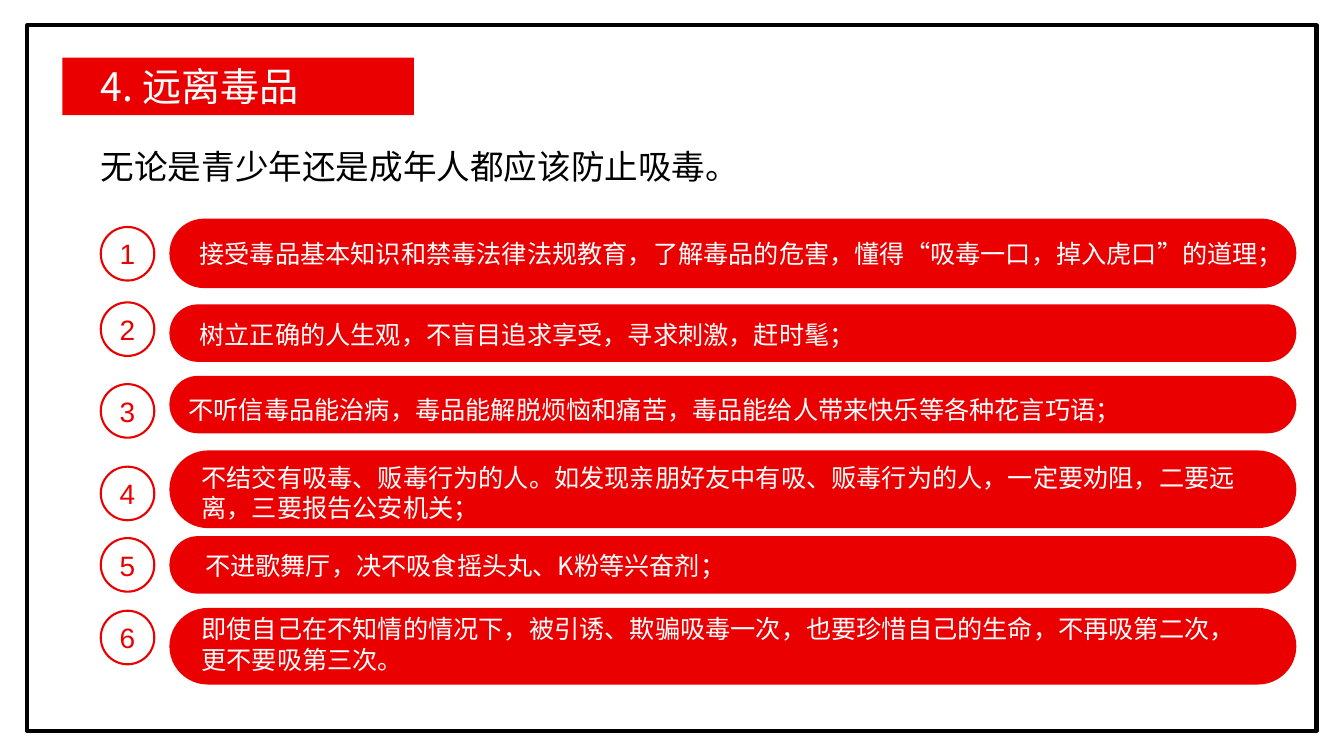
"""Build the slide on staying away from drugs, with six numbered pieces of advice."""

from dataclasses import dataclass

from lxml.etree import SubElement
from pptx import Presentation
from pptx.dml.color import RGBColor
from pptx.enum.shapes import MSO_SHAPE
from pptx.enum.text import MSO_ANCHOR, MSO_AUTO_SIZE, PP_ALIGN
from pptx.oxml.ns import qn
from pptx.shapes.autoshape import Shape
from pptx.slide import Slide
from pptx.text.text import TextFrame
from pptx.util import Cm, Pt

RED = RGBColor(0xEA, 0x00, 0x00)
WHITE = RGBColor(0xFF, 0xFF, 0xFF)
BLACK = RGBColor(0x00, 0x00, 0x00)
CHINESE_FONT = "Noto Sans CJK SC"
NUMBER_FONT = "Arial"
CIRCLE_LEFT, CIRCLE_SIZE = 2.54, 1.35
BAR_LEFT, BAR_WIDTH = 4.27, 28.4


@dataclass(frozen=True)
class Box:
    left: float
    top: float
    width: float
    height: float

    def lengths(self) -> tuple[Cm, Cm, Cm, Cm]:
        return Cm(self.left), Cm(self.top), Cm(self.width), Cm(self.height)


@dataclass(frozen=True)
class Advice:
    circle_top: float
    bar_top: float
    bar_height: float
    text_box: Box
    text: str


ADVICE = [
    Advice(5.72, 5.51, 1.75, Box(4.78, 5.87, 27.48, 1.02),
           "接受毒品基本知识和禁毒法律法规教育，了解毒品的危害，懂得“吸毒一口，掉入虎口”的道理；"),
    Advice(7.62, 7.67, 1.45, Box(4.78, 7.92, 22.48, 1.02),
           "树立正确的人生观，不盲目追求享受，寻求刺激，赶时髦；"),
    Advice(9.68, 9.47, 1.45, Box(4.5, 9.8, 27.43, 1.02),
           "不听信毒品能治病，毒品能解脱烦恼和痛苦，毒品能给人带来快乐等各种花言巧语；"),
    Advice(11.76, 11.35, 1.96, Box(4.83, 11.53, 27.1, 1.8),
           "不结交有吸毒、贩毒行为的人。如发现亲朋好友中有吸、贩毒行为的人，一定要劝阻，二要远离，三要报告公安机关；"),
    Advice(13.56, 13.51, 1.45, Box(4.92, 13.74, 21.84, 1.02),
           "不进歌舞厅，决不吸食摇头丸、K粉等兴奋剂；"),
    Advice(15.39, 15.32, 1.93, Box(4.83, 15.34, 26.49, 1.8),
           "即使自己在不知情的情况下，被引诱、欺骗吸毒一次，也要珍惜自己的生命，不再吸第二次，更不要吸第三次。"),
]


def write(frame: TextFrame, text: str, size: float, color: RGBColor,
          font_name: str = CHINESE_FONT, align: PP_ALIGN = PP_ALIGN.LEFT) -> None:
    frame.word_wrap = True
    paragraph = frame.paragraphs[0]
    paragraph.alignment = align
    run = paragraph.add_run()
    run.text = text
    run.font.size = Pt(size)
    run.font.color.rgb = color
    run.font.name = font_name
    SubElement(run.font._element, qn("a:ea")).set("typeface", font_name)


def add_outline(slide: Slide, kind: MSO_SHAPE, box: Box, fill: RGBColor | None,
                line: RGBColor | None = None, line_width: float = 0) -> Shape:
    shape = slide.shapes.add_shape(kind, *box.lengths())
    shape.shadow.inherit = False
    if fill is None:
        shape.fill.background()
    else:
        shape.fill.solid()
        shape.fill.fore_color.rgb = fill
    if line is None:
        shape.line.fill.background()
    else:
        shape.line.color.rgb = line
        shape.line.width = Pt(line_width)
    return shape


def add_text(slide: Slide, box: Box, text: str, size: float, color: RGBColor) -> None:
    write(slide.shapes.add_textbox(*box.lengths()).text_frame, text, size, color)


def format_title(slide: Slide, box: Box, text: str) -> None:
    title = slide.shapes.title
    title.left, title.top, title.width, title.height = box.lengths()
    title.fill.solid()
    title.fill.fore_color.rgb = RED
    frame = title.text_frame
    frame.auto_size = MSO_AUTO_SIZE.NONE
    frame.vertical_anchor = MSO_ANCHOR.MIDDLE
    frame.margin_left = Cm(0.97)
    write(frame, text, 28, WHITE)
    frame.paragraphs[0].line_spacing = 1.0


def add_advice(slide: Slide, number: int, advice: Advice) -> None:
    bar = add_outline(slide, MSO_SHAPE.ROUNDED_RECTANGLE,
                      Box(BAR_LEFT, advice.bar_top, BAR_WIDTH, advice.bar_height), RED)
    bar.adjustments[0] = 0.5
    circle = add_outline(slide, MSO_SHAPE.OVAL,
                         Box(CIRCLE_LEFT, advice.circle_top, CIRCLE_SIZE, CIRCLE_SIZE),
                         WHITE, RED, 1.5)
    frame = circle.text_frame
    frame.margin_left = frame.margin_right = Cm(0)
    frame.vertical_anchor = MSO_ANCHOR.MIDDLE
    write(frame, str(number), 20, RED, NUMBER_FONT, PP_ALIGN.CENTER)
    add_text(slide, advice.text_box, advice.text, 18, WHITE)


def main() -> None:
    presentation = Presentation()
    presentation.slide_width, presentation.slide_height = Cm(33.87), Cm(19.05)
    slide = presentation.slides.add_slide(presentation.slide_layouts[5])
    format_title(slide, Box(1.57, 1.45, 8.86, 1.45), "4. 远离毒品")
    add_outline(slide, MSO_SHAPE.RECTANGLE, Box(0.69, 0.64, 32.49, 17.78), None, BLACK, 3)
    add_text(slide, Box(2.29, 3.56, 16.26, 1.27),
             "无论是青少年还是成年人都应该防止吸毒。", 24, BLACK)
    for number, advice in enumerate(ADVICE, start=1):
        add_advice(slide, number, advice)
    presentation.save("out.pptx")


if __name__ == "__main__":
    main()
